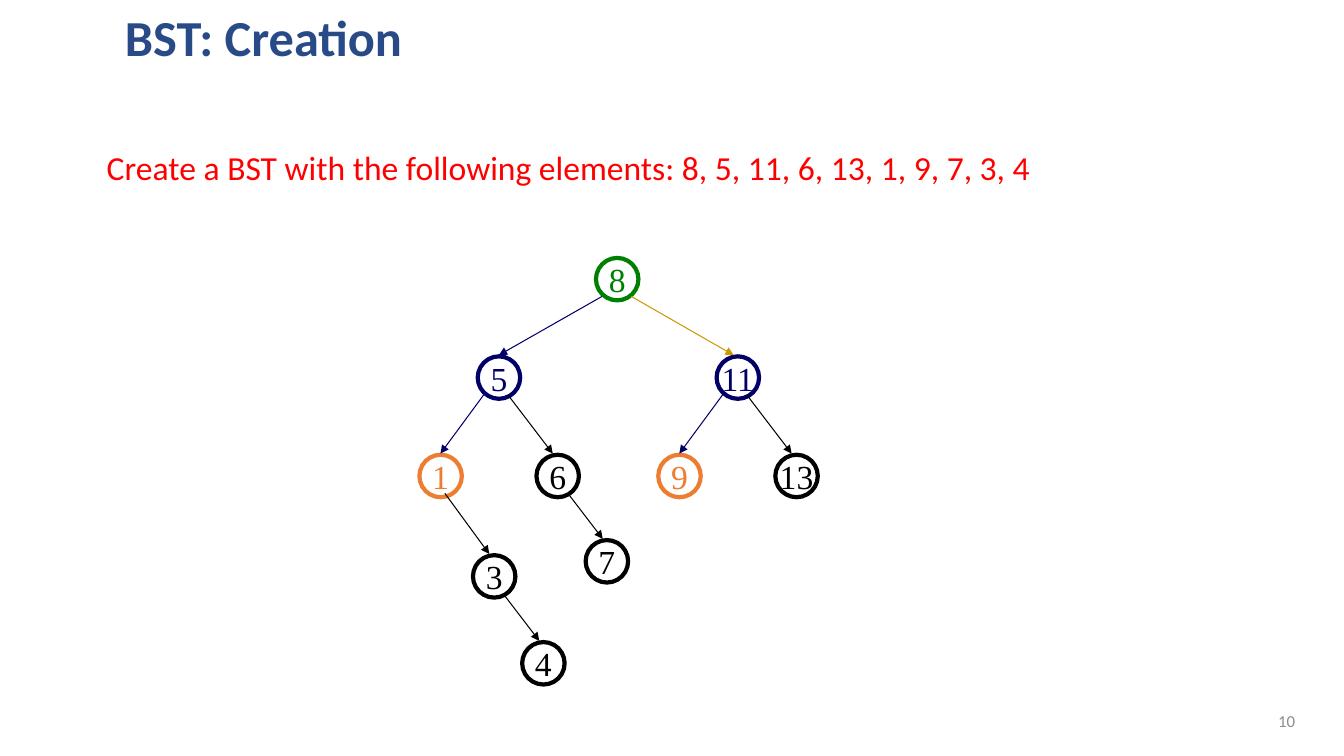
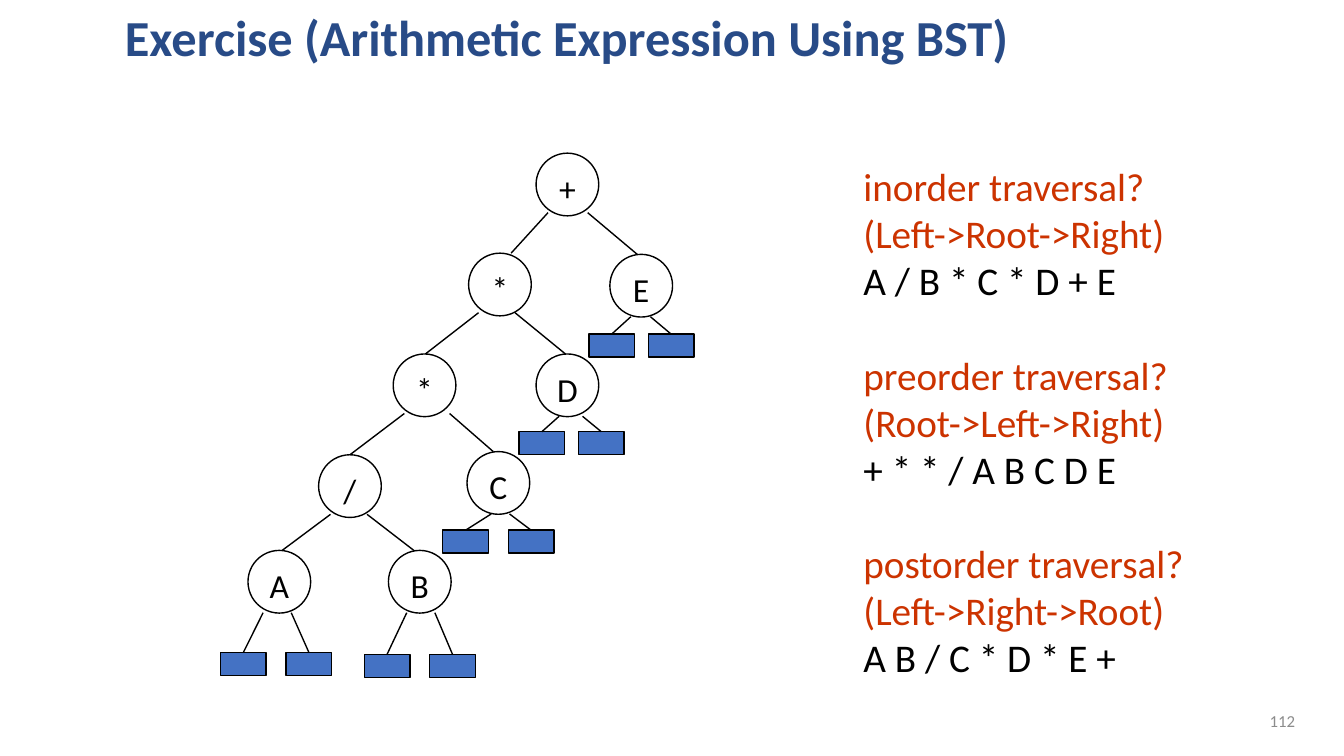
import pptx
import pptx.util
import pptx.dml.color
import pptx.enum.shapes
import pptx.enum.text
import pptx.oxml
import pptx.oxml.ns

Cm = pptx.util.Cm
Pt = pptx.util.Pt
SHAPE = pptx.enum.shapes.MSO_SHAPE
ALIGN = pptx.enum.text.PP_ALIGN
ANCHOR = pptx.enum.text.MSO_ANCHOR

BLACK, NAVY, GREEN, ORANGE = "000000", "000066", "008000", "ED7D31"
GOLD, RED, RUST, LEAF_BLUE = "CC9900", "FF0000", "CC3300", "4472C4"
TITLE_BLUE, GREY = "284B87", "8C8C8C"

BST_DIAMETER = 1.07
BST_NODES = {
    "8": (4.45, 0, GREEN), "5": (1.47, 2.48, NAVY), "11": (7.49, 2.48, NAVY),
    "1": (0, 4.96, ORANGE), "6": (2.95, 4.96, BLACK),
    "9": (6.02, 4.96, ORANGE), "13": (8.97, 4.96, BLACK),
    "3": (1.35, 7.49, BLACK), "7": (4.19, 7.11, BLACK), "4": (2.59, 9.68, BLACK),
}
BST_EDGES = [
    ("8", "5", 0.15, 0.53, NAVY), ("8", "11", 0.89, 0.43, GOLD),
    ("5", "1", 0.15, 0.53, NAVY), ("5", "6", 0.76, 0.41, BLACK),
    ("11", "9", 0.15, 0.53, NAVY), ("11", "13", 0.76, 0.41, BLACK),
    ("6", "7", 0.79, 0.43, BLACK), ("1", "3", 0.64, 0.41, BLACK),
    ("3", "4", 0.76, 0.43, BLACK),
]

EXPR_DIAMETER = 1.58
EXPR_NODES = {
    "sum": ("+", 7.26, 0), "outer": ("*", 5.56, 2.52), "inner": ("*", 3.66, 5.06),
    "quotient": ("/", 1.78, 7.6), "A": ("A", 0, 10.01), "B": ("B", 3.54, 10.01),
    "C": ("C", 5.52, 7.52), "D": ("D", 7.26, 5.06), "E": ("E", 9.12, 2.55),
}
EXPR_EDGES = [
    ("sum", "outer", 0.3, 1.07), ("sum", "E", 1.3, 0.69),
    ("outer", "inner", 0.25, 0.81), ("outer", "D", 1.17, 0.74),
    ("inner", "quotient", 0.28, 0.79), ("inner", "C", 1.42, 0.66),
    ("quotient", "A", 0.3, 0.86), ("quotient", "B", 1.22, 0.64),
]
LEAF_PAIRS = {
    "A": (-0.69, 1.65, 2.57, 0.38, 1.09), "B": (-0.61, 1.65, 2.62, 0.46, 1.17),
    "C": (-0.61, 1.65, 1.98, 0.61, 1.07), "D": (-0.43, 1.5, 1.96, 0.58, 1.17),
    "E": (-0.53, 1.5, 2.01, 0.53, 1.02),
}
TRAVERSALS = [
    ("inorder traversal?", "(Left->Root->Right)", "A / B * C * D + E"),
    ("preorder traversal?", "(Root->Left->Right)", "+ * * / A B C D E"),
    ("postorder traversal?", "(Left->Right->Root)", "A B / C * D * E +"),
]


def rgb(value):
    return pptx.dml.color.RGBColor.from_string(value)


def write(tf, text, size=24, color=BLACK, font="Calibri", bold=False,
          align=ALIGN.LEFT, before=0, spacing=None):
    p = tf.paragraphs[0] if not tf.text else tf.add_paragraph()
    p.alignment, p.space_before, p.line_spacing = align, Pt(before), spacing
    r = p.add_run()
    r.text = text
    r.font.size, r.font.name, r.font.bold = Pt(size), font, bold
    r.font.color.rgb = rgb(color)


def text_frame(s, x, y, w, h, anchor=ANCHOR.TOP):
    tf = s.shapes.add_textbox(Cm(x), Cm(y), Cm(w), Cm(h)).text_frame
    tf.word_wrap = True
    tf.vertical_anchor = anchor
    return tf


def add_shape(s, kind, x, y, w, h, color, weight, fill=None):
    sp = s.shapes.add_shape(kind, Cm(x), Cm(y), Cm(w), Cm(h))
    sp.shadow.inherit = False
    if fill:
        sp.fill.solid()
        sp.fill.fore_color.rgb = rgb(fill)
    else:
        sp.fill.background()
    sp.line.color.rgb = rgb(color)
    sp.line.width = Pt(weight)
    return sp


def add_node(s, text, x, y, diameter, color, weight, font, top=0):
    sp = add_shape(s, SHAPE.OVAL, x, y, diameter, diameter, color, weight)
    tf = sp.text_frame
    tf.margin_left = tf.margin_right = tf.margin_bottom = 0
    tf.margin_top = Cm(top)
    tf.word_wrap = False
    tf.vertical_anchor = ANCHOR.MIDDLE
    write(tf, text, color=color, font=font, align=ALIGN.CENTER)


def add_edge(s, x1, y1, x2, y2, color=BLACK, weight=1, arrow=False):
    c = s.shapes.add_connector(pptx.enum.shapes.MSO_CONNECTOR.STRAIGHT,
                               Cm(x1), Cm(y1), Cm(x2), Cm(y2))
    c.line.color.rgb = rgb(color)
    c.line.width = Pt(weight)
    qn = pptx.oxml.ns.qn
    sp_pr = c.element.find(qn("p:spPr"))
    if arrow:
        tail = sp_pr.find(qn("a:ln")).makeelement(qn("a:tailEnd"), {"type": "triangle"})
        sp_pr.find(qn("a:ln")).append(tail)
    sp_pr.append(sp_pr.makeelement(qn("a:effectLst"), {}))
    return c


def add_base(prs, title, number):
    s = prs.slides.add_slide(prs.slide_layouts[6])
    write(text_frame(s, 25.27, 17.65, 7.62, 1.02, ANCHOR.MIDDLE), number,
          size=12, color=GREY, align=ALIGN.RIGHT)
    write(text_frame(s, 2.9, 0.1, 28.22, 1.83, ANCHOR.MIDDLE), title,
          size=36, color=TITLE_BLUE, bold=True, spacing=0.9)
    return s


def search_tree(s, x, y):
    for text, (dx, dy, color) in BST_NODES.items():
        add_node(s, text, x + dx, y + dy, BST_DIAMETER, color, 3, "Times New Roman")
    for parent, child, start, end, color in BST_EDGES:
        px, py, _ = BST_NODES[parent]
        cx, cy, _ = BST_NODES[child]
        add_edge(s, x + px + start, y + py + 0.97, x + cx + end, y + cy - 0.03,
                 color, 0.75, arrow=True)


def leaf_pair(s, x, y, left, pitch, drop, *starts):
    for i, start in enumerate(starts):
        leaf = add_shape(s, SHAPE.RECTANGLE, x + left + i * pitch, y + drop,
                         1.15, 0.58, BLACK, 1, LEAF_BLUE)
        c = add_edge(s, x + start, y + 1.57, x + left + i * pitch, y + drop)
        c.end_connect(leaf, 0)


def expression_tree(s, x, y):
    for text, dx, dy in EXPR_NODES.values():
        add_node(s, text, x + dx, y + dy, EXPR_DIAMETER, BLACK, 1, "Calibri", top=0.18)
    for parent, child, start, end in EXPR_EDGES:
        _, px, py = EXPR_NODES[parent]
        _, cx, cy = EXPR_NODES[child]
        add_edge(s, x + px + start, y + py + 1.5, x + cx + end, y + cy)
    for name, pair in LEAF_PAIRS.items():
        _, dx, dy = EXPR_NODES[name]
        leaf_pair(s, x + dx, y + dy, *pair)


def traversal_list(s, x, y, w, h):
    tf = text_frame(s, x, y, w, h)
    for i, (question, order, answer) in enumerate(TRAVERSALS):
        write(tf, question, size=28, color=RUST, before=34 if i else 0)
        write(tf, order, size=28, color=RUST)
        write(tf, answer, size=28)


def creation_slide(prs):
    s = add_base(prs, "BST: Creation", "10")
    write(text_frame(s, 2.44, 3.58, 26, 1.27),
          "Create a BST with the following elements: 8, 5, 11, 6, 13, 1, 9, 7, 3, 4",
          color=RED)
    search_tree(s, 10.57, 6.5)


def expression_slide(prs):
    s = add_base(prs, "Exercise (Arithmetic Expression Using BST)", "112")
    expression_tree(s, 6.25, 3.86)
    traversal_list(s, 21.51, 3.96, 8.66, 13.44)


def main():
    prs = pptx.Presentation()
    prs.slide_width, prs.slide_height = Cm(33.87), Cm(19.05)
    creation_slide(prs)
    expression_slide(prs)
    prs.save("out.pptx")


if __name__ == "__main__":
    main()
